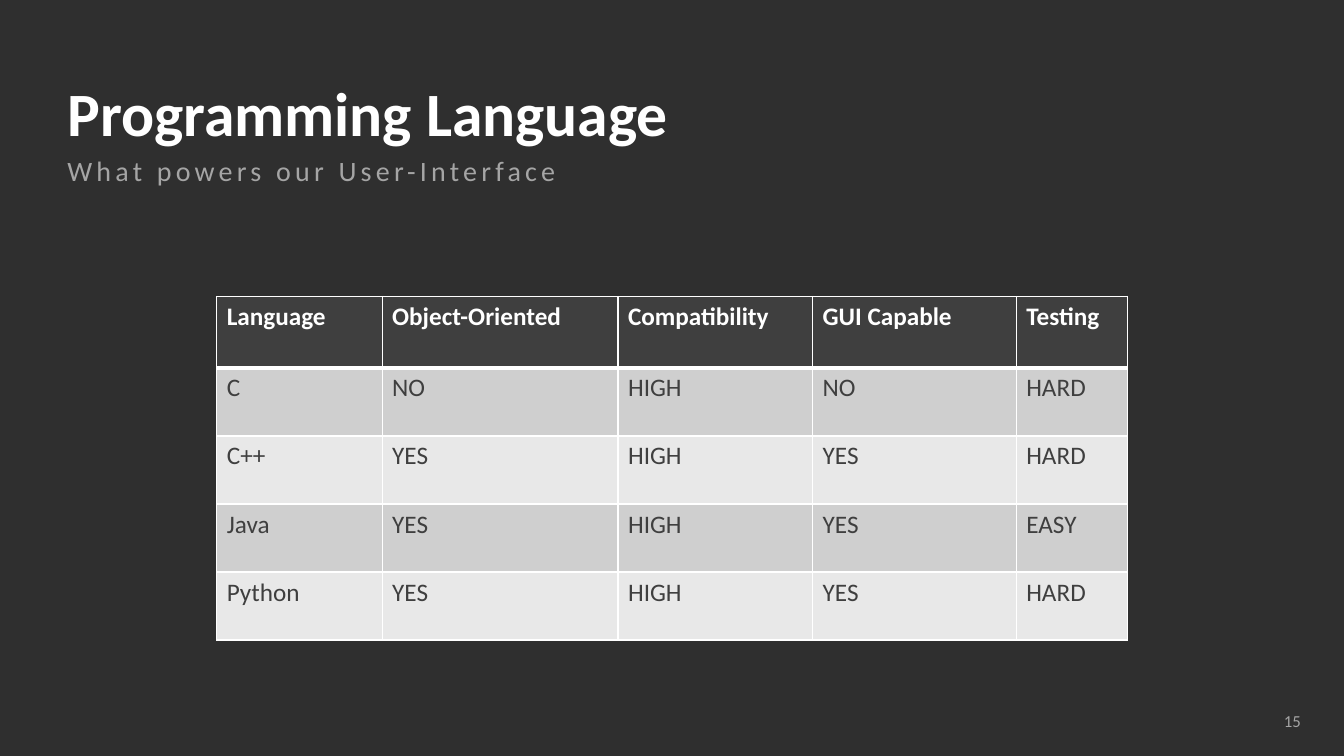
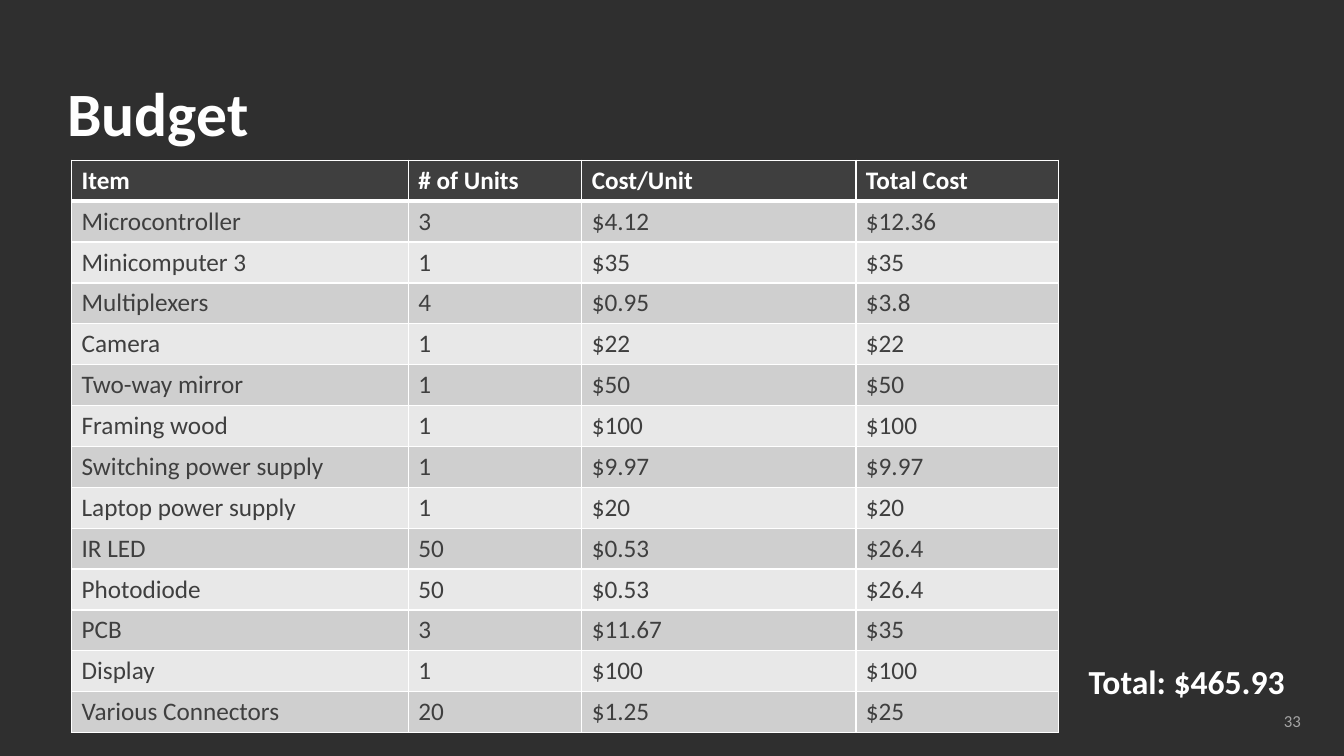
"""Build two dark slides, a language comparison and a budget, each with a table."""
from lxml import etree
from pptx import Presentation
from pptx import util as u
from pptx.dml.color import RGBColor
from pptx.enum import text
from pptx.oxml import ns

BACKGROUND = RGBColor(0x2F, 0x2F, 0x2F)
DARK = RGBColor(0x3F, 0x3F, 0x3F)
WHITE = RGBColor(0xFF, 0xFF, 0xFF)
GREY = RGBColor(0xA5, 0xA5, 0xA5)
BANDS = [RGBColor(0xE8, 0xE8, 0xE8), RGBColor(0xCF, 0xCF, 0xCF)]
FONT = "Calibri"

TITLE = dict(size=44, bold=True, anchor=text.MSO_ANCHOR.BOTTOM, bottom=0, line=0.9)
TOTAL = dict(TITLE, size=24)
SUBTITLE = dict(size=20, color=GREY, line=0.9, before=10, tracking=3)
NUMBER = dict(size=12, color=GREY, align=text.PP_ALIGN.RIGHT, anchor=text.MSO_ANCHOR.MIDDLE)

TITLE_BOX = (0.57, 0.23, 9.11, 1.26)
NUMBER_BOX = (12.19, 6.95, 0.81, 0.4)

SLIDES = [
    dict(
        labels=[
            ("What powers our User-Interface", (0.57, 1.51, 8.06, 0.67), SUBTITLE),
            ("15", NUMBER_BOX, NUMBER),
            ("Programming Language", TITLE_BOX, TITLE),
        ],
        corner=(2.15, 2.94),
        widths=[1.64, 2.34, 1.93, 2.02, 1.1],
        heights=[0.71] + [0.675] * 4,
        rows=[
            ("Language", "Object-Oriented", "Compatibility", "GUI Capable", "Testing"),
            ("C", "NO", "HIGH", "NO", "HARD"),
            ("C++", "YES", "HIGH", "YES", "HARD"),
            ("Java", "YES", "HIGH", "YES", "EASY"),
            ("Python", "YES", "HIGH", "YES", "HARD"),
        ],
    ),
    dict(
        labels=[
            ("33", NUMBER_BOX, NUMBER),
            ("Budget", TITLE_BOX, TITLE),
            ("Total: $465.93", (10.7, 6.43, 2.27, 0.53), TOTAL),
        ],
        corner=(0.71, 1.59),
        widths=[3.34, 1.72, 2.72, 2.01],
        heights=[5.68 / 14] * 14,
        rows=[
            ("Item", "# of Units", "Cost/Unit", "Total Cost"),
            ("Microcontroller", "3", "$4.12", "$12.36"),
            ("Minicomputer 3", "1", "$35", "$35"),
            ("Multiplexers", "4", "$0.95", "$3.8"),
            ("Camera", "1", "$22", "$22"),
            ("Two-way mirror", "1", "$50", "$50"),
            ("Framing wood", "1", "$100", "$100"),
            ("Switching power supply", "1", "$9.97", "$9.97"),
            ("Laptop power supply", "1", "$20", "$20"),
            ("IR LED", "50", "$0.53", "$26.4"),
            ("Photodiode", "50", "$0.53", "$26.4"),
            ("PCB", "3", "$11.67", "$35"),
            ("Display", "1", "$100", "$100"),
            ("Various Connectors", "20", "$1.25", "$25"),
        ],
    ),
]


def write(tf, words, size=18, color=WHITE, bold=False, align=text.PP_ALIGN.LEFT,
          anchor=text.MSO_ANCHOR.TOP, bottom=0.05, line=None, before=0, tracking=0):
    """Put one formatted paragraph into a text frame."""
    tf.word_wrap = True
    tf.vertical_anchor = anchor
    tf.margin_bottom = u.Inches(bottom)
    p = tf.paragraphs[0]
    p.alignment = align
    p.space_before = u.Pt(before)
    if line:
        p.line_spacing = line
    r = p.add_run()
    r.text = words
    r.font.name, r.font.size, r.font.bold = FONT, u.Pt(size), bold
    r.font.color.rgb = color
    if tracking:
        r.font._element.set("spc", str(tracking * 100))


def style_cell(cell, fill, top, bottom):
    """Give a cell its fill and white borders, with widths in points."""
    tcPr = cell._tc.get_or_add_tcPr()
    for side, width in (("L", 1), ("R", 1), ("T", top), ("B", bottom)):
        ln = etree.SubElement(tcPr, ns.qn("a:ln" + side), w=str(u.Pt(width)))
        solid = etree.SubElement(ln, ns.qn("a:solidFill"))
        etree.SubElement(solid, ns.qn("a:srgbClr"), val=str(WHITE))
    cell.fill.solid()
    cell.fill.fore_color.rgb = fill


prs = Presentation()
prs.slide_width, prs.slide_height = u.Inches(13.33), u.Inches(7.5)
background = prs.slide_master.background.fill
background.solid()
background.fore_color.rgb = BACKGROUND

for content in SLIDES:
    s = prs.slides.add_slide(prs.slide_layouts[6])
    rows, widths, heights = content["rows"], content["widths"], content["heights"]
    size = (sum(widths), sum(heights))
    table = s.shapes.add_table(len(rows), len(widths),
                               *map(u.Inches, content["corner"] + size)).table
    for column, width in zip(table.columns, widths):
        column.width = u.Inches(width)
    for i, (row, height, values) in enumerate(zip(table.rows, heights, rows)):
        row.height = u.Inches(height)
        header = i == 0
        for cell, value in zip(row.cells, values):
            style_cell(cell, DARK if header else BANDS[i % 2],
                       top=3 if i == 1 else 1, bottom=3 if header else 1)
            write(cell.text_frame, value, color=WHITE if header else DARK, bold=header)
    for words, box, style in content["labels"]:
        sp = s.shapes.add_textbox(*map(u.Inches, box))
        write(sp.text_frame, words, **style)

prs.save("out.pptx")
